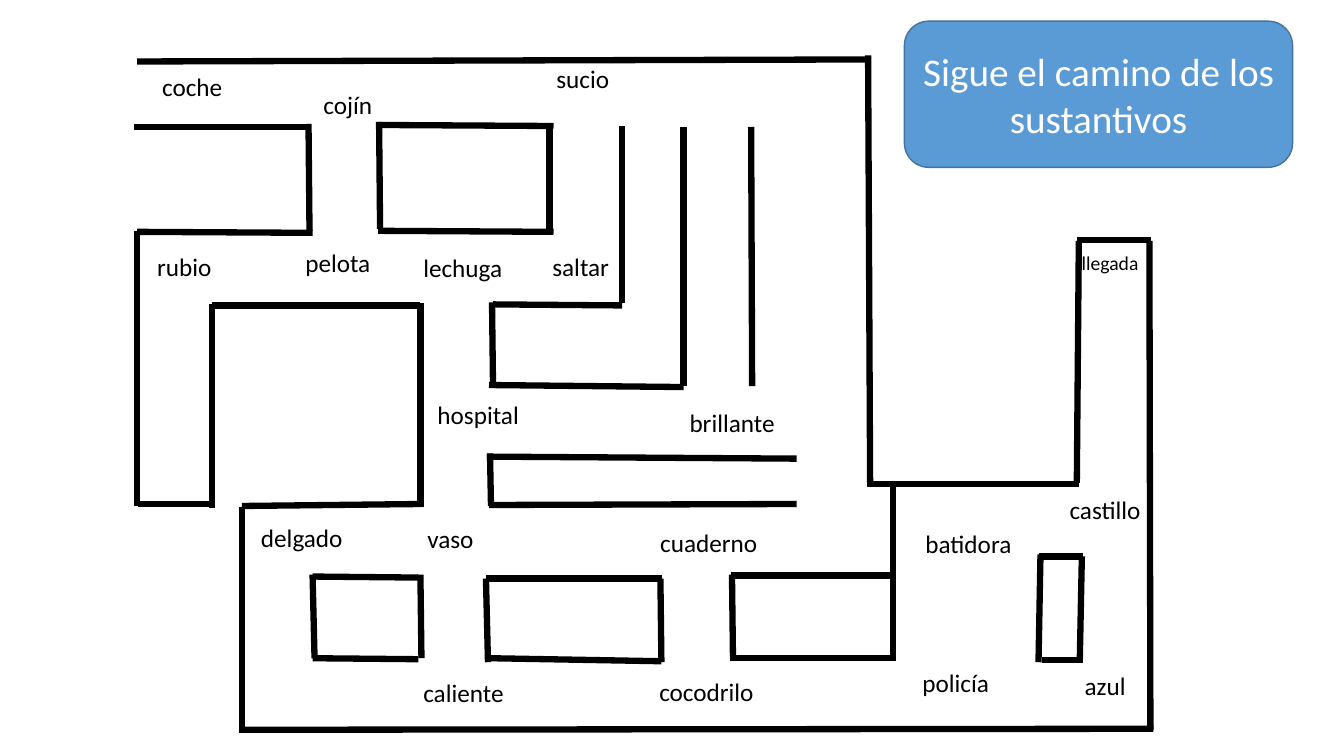
from pptx import Presentation
from pptx.dml.color import RGBColor
from pptx.enum.shapes import MSO_CONNECTOR as Connector, MSO_SHAPE as Shape
from pptx.enum.text import MSO_ANCHOR as Anchor, MSO_AUTO_SIZE as AutoSize, PP_ALIGN as Align
from pptx.oxml.ns import qn
from pptx.util import Inches, Pt
from lxml import etree

COLORS = {"wall": "000000", "word": "000000", "title_fill": "5B9BD5",
          "title_line": "43739E", "title_text": "FFFFFF"}

# Each wall: start x, start y, end x, end y
WALLS = {
    "outer edge": [
        (1.36, 0.61, 8.62, 0.59), (8.63, 4.79, 8.61, 0.55), (8.6, 4.8, 10.7, 4.8),
        (10.68, 4.79, 10.7, 2.39), (10.68, 2.38, 11.42, 2.38),
        (11.41, 7.24, 11.4, 2.39), (2.42, 7.24, 11.44, 7.23),
        (2.4, 7.27, 2.4, 5.03), (2.4, 5.02, 4.18, 5)],
    "entrance": [
        (1.33, 1.26, 3.07, 1.26), (3.06, 1.23, 3.07, 2.29), (1.36, 2.3, 3.1, 2.31)],
    "upper block": [
        (3.75, 1.24, 5.49, 1.25), (5.45, 2.31, 5.45, 1.26),
        (3.75, 2.29, 5.49, 2.3), (3.76, 1.21, 3.77, 2.27)],
    "left dead end": [
        (1.36, 5.02, 1.36, 2.29), (1.37, 5, 2.12, 5), (2.1, 5.04, 2.1, 3.02),
        (2.1, 3.03, 4.17, 3.03), (4.17, 5.03, 4.17, 3.01)],
    "upper corridors": [
        (6.17, 3.01, 6.17, 1.25), (4.89, 3.02, 6.17, 3.03), (4.89, 3.83, 4.88, 3),
        (4.85, 3.82, 6.78, 3.84), (6.78, 3.83, 6.78, 1.26), (7.46, 3.83, 7.45, 1.26)],
    "middle bar": [
        (4.83, 4.53, 7.9, 4.55), (4.87, 5.02, 4.86, 4.5), (4.85, 5.01, 7.9, 5)],
    "lower left block": [
        (3.1, 5.72, 4.15, 5.73), (4.17, 5.7, 4.18, 6.53),
        (3.1, 6.53, 4.15, 6.54), (3.1, 5.7, 3.12, 6.53)],
    "lower middle block": [
        (4.82, 5.74, 6.57, 5.74), (6.55, 5.74, 6.56, 6.57),
        (4.86, 6.53, 6.56, 6.56), (4.82, 5.74, 4.84, 6.57)],
    "lower right block": [
        (7.25, 5.71, 8.86, 5.71), (8.86, 6.56, 8.86, 4.81),
        (7.24, 6.53, 8.85, 6.53), (7.26, 5.7, 7.27, 6.53)],
    "finish block": [
        (10.3, 5.52, 10.74, 5.52), (10.73, 5.52, 10.71, 6.53),
        (10.33, 6.55, 10.74, 6.55), (10.32, 5.5, 10.3, 6.57)],
}

# Each word: text, left, top, width
WORDS = [
    ("coche", 1.51, 0.66, 0.94), ("cojín", 3.11, 0.84, 0.94),
    ("sucio", 5.42, 0.58, 0.94), ("rubio", 1.46, 2.44, 0.94),
    ("pelota", 2.93, 2.4, 0.94), ("lechuga", 4.1, 2.45, 1.05),
    ("saltar", 5.38, 2.44, 0.94), ("hospital", 4.24, 3.91, 1.09),
    ("brillante", 6.74, 3.99, 1.15), ("delgado", 2.49, 5.13, 1.05),
    ("vaso", 4.14, 5.14, 0.94), ("cuaderno", 6.45, 5.18, 1.24),
    ("batidora", 9.08, 5.19, 1.15), ("castillo", 10.51, 4.86, 0.94),
    ("caliente", 4.1, 6.67, 1.07), ("cocodrilo", 6.44, 6.66, 1.21),
    ("policía", 9.05, 6.57, 0.94), ("azul", 10.66, 6.6, 0.94),
]


class MazeSlide:
    """Holds the style and the slide the maze is drawn on."""
    font = "Calibri"
    wall_width = Pt(4.5)

    def __init__(self, slide):
        self.slide = slide

    def color(self, name):
        return RGBColor.from_string(COLORS[name])

    def fill_text(self, frame, text, size, color, frame_format):
        for attribute, value in frame_format.items():
            setattr(frame, attribute, value)
        paragraph = frame.paragraphs[0]
        run = paragraph.add_run()
        run.text = text
        for attribute, value in {"name": self.font, "size": Pt(size)}.items():
            setattr(run.font, attribute, value)
        run.font.color.rgb = self.color(color)
        return paragraph

    def wall(self, *ends):
        wall = self.slide.shapes.add_connector(Connector.STRAIGHT, *map(Inches, ends))
        wall.line.width = self.wall_width
        wall.line.color.rgb = self.color("wall")
        etree.SubElement(wall._element.spPr, qn("a:effectLst"))

    def word(self, text, left, top, width, height=0.4, size=18):
        box = self.slide.shapes.add_textbox(*map(Inches, (left, top, width, height)))
        self.fill_text(box.text_frame, text, size, "word",
                       {"word_wrap": True, "auto_size": AutoSize.SHAPE_TO_FIT_TEXT})

    def title(self, text, *place):
        banner = self.slide.shapes.add_shape(Shape.ROUNDED_RECTANGLE, *map(Inches, place))
        banner.shadow.inherit = False
        banner.fill.solid()
        banner.fill.fore_color.rgb = self.color("title_fill")
        banner.line.color.rgb = self.color("title_line")
        banner.line.width = Pt(1)
        paragraph = self.fill_text(banner.text_frame, text, 28, "title_text",
                                   {"word_wrap": True, "vertical_anchor": Anchor.MIDDLE})
        paragraph.alignment = Align.CENTER


def main():
    deck = Presentation()
    deck.slide_width, deck.slide_height = Inches(13.33), Inches(7.5)
    maze = MazeSlide(deck.slides.add_slide(deck.slide_layouts[6]))
    for walls in WALLS.values():
        for ends in walls:
            maze.wall(*ends)
    for word in WORDS:
        maze.word(*word)
    maze.word("llegada", 10.63, 2.44, 0.94, height=0.34, size=14)
    maze.title("Sigue el camino de los sustantivos", 8.97, 0.21, 3.85, 1.45)
    deck.save("out.pptx")


if __name__ == "__main__":
    main()
